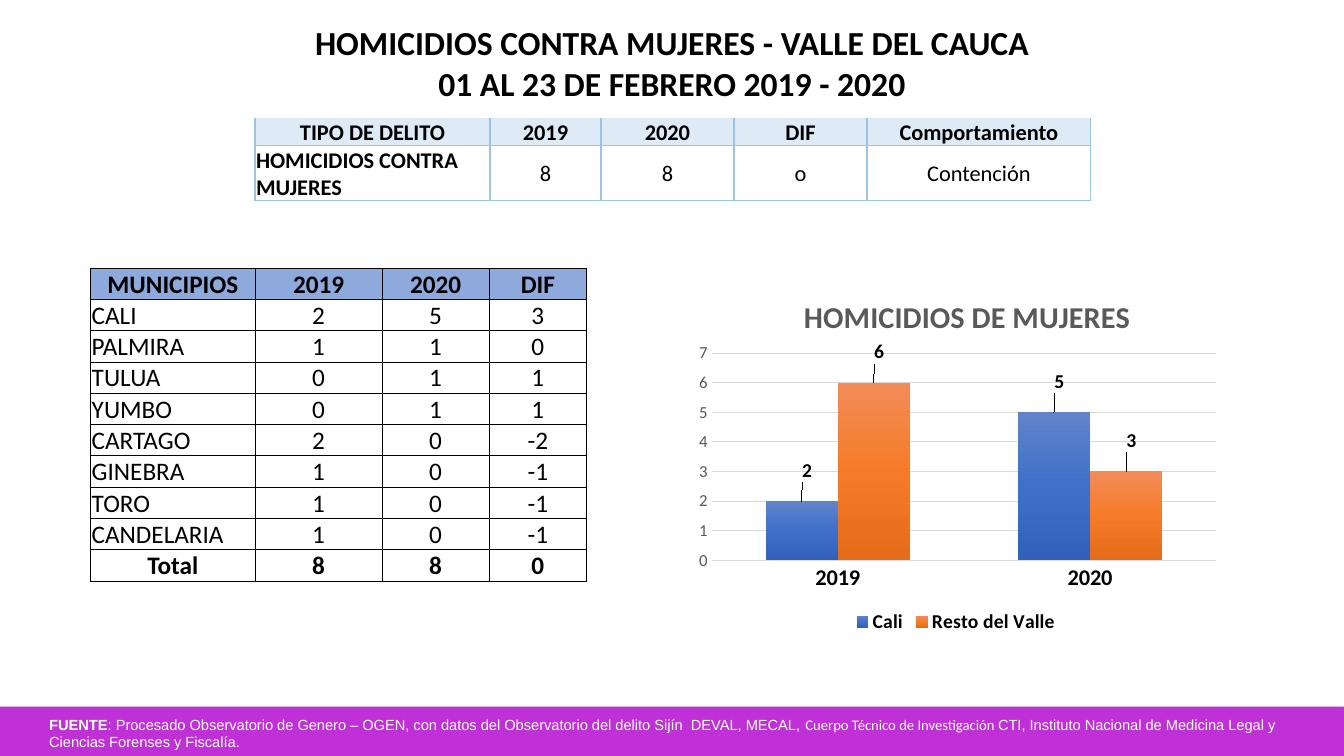
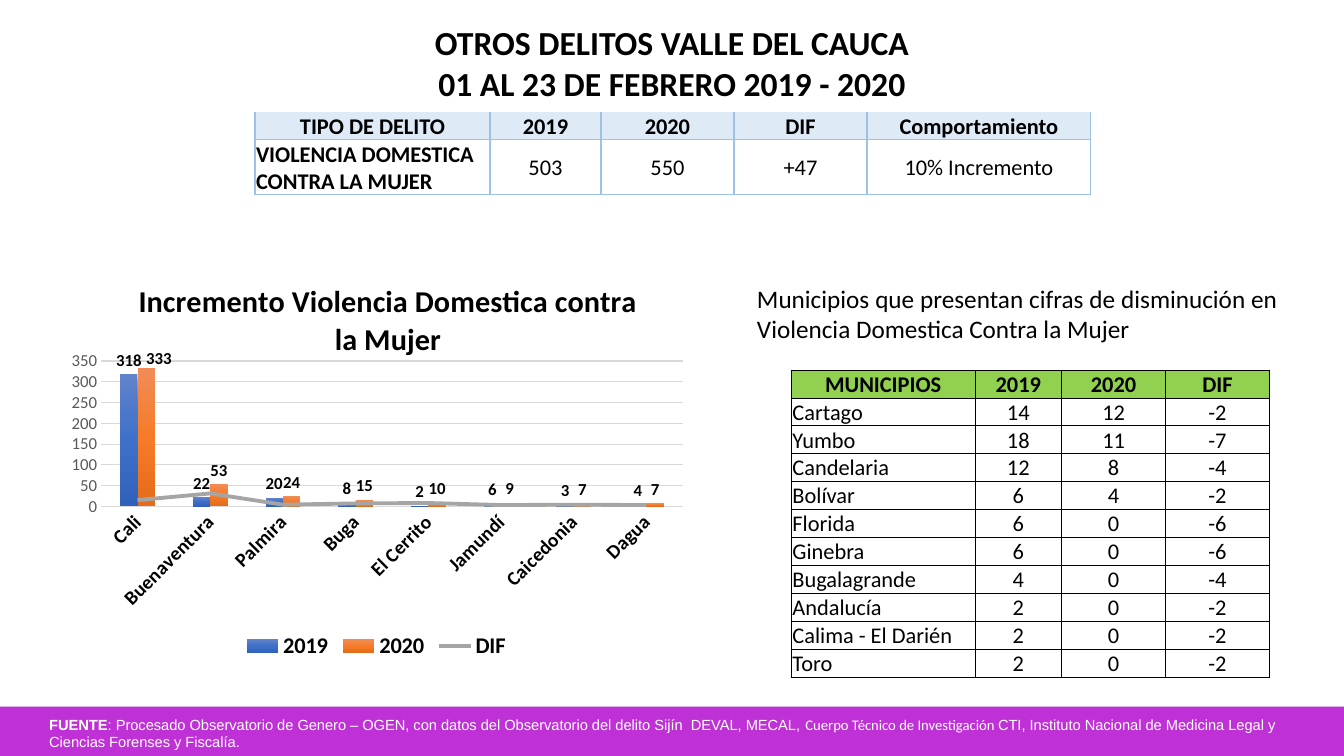
from lxml import etree
from pptx import Presentation
from pptx.chart.data import CategoryChartData
from pptx.dml.color import RGBColor
from pptx.enum.chart import XL_CHART_TYPE as ChartType, XL_LABEL_POSITION as LabelPosition
from pptx.enum.chart import XL_LEGEND_POSITION as LegendPosition, XL_MARKER_STYLE as Marker
from pptx.enum.chart import XL_TICK_MARK as Tick
from pptx.enum.shapes import MSO_SHAPE as Shape
from pptx.enum.text import MSO_ANCHOR as Anchor, PP_ALIGN as Align
from pptx.oxml import parse_xml
from pptx.oxml.ns import nsdecls, qn
from pptx.util import Inches, Pt

BLACK = RGBColor(0x00, 0x00, 0x00)
WHITE = RGBColor(0xFF, 0xFF, 0xFF)
PURPLE = RGBColor(0xBF, 0x31, 0xD7)
PALE_BLUE = RGBColor(0xDE, 0xEA, 0xF6)
SKY = RGBColor(0x9C, 0xC2, 0xE5)
PERIWINKLE = RGBColor(0x8E, 0xA9, 0xDB)
GREEN = RGBColor(0x92, 0xD0, 0x50)
DARK_GREY = RGBColor(0x59, 0x59, 0x59)
MID_GREY = RGBColor(0xA5, 0xA5, 0xA5)
LIGHT_GREY = RGBColor(0xD9, 0xD9, 0xD9)
BLUES = [RGBColor(0x61, 0x83, 0xCB), RGBColor(0x3E, 0x70, 0xCA), RGBColor(0x30, 0x62, 0xBB)]
ORANGES = [RGBColor(0xF1, 0x8C, 0x57), RGBColor(0xF6, 0x7B, 0x28), RGBColor(0xE5, 0x6C, 0x19)]

PERIOD = "01 AL 23 DE FEBRERO 2019 - 2020"
SOURCE = [
    ("FUENTE", {"bold": True}),
    (": Procesado Observatorio de Genero – OGEN, con datos del Observatorio del delito Sijín  "
     "DEVAL, MECAL, ", {}),
    ("Cuerpo Técnico de Investigación ", {"font": "Calibri"}),
    ("CTI, Instituto Nacional de Medicina Legal y Ciencias Forenses y Fiscalía.", {}),
]
SUMMARY_HEADER = ["TIPO DE DELITO", "2019", "2020", "DIF", "Comportamiento"]
SUMMARY_WIDTHS = [2.33, 1.1, 1.32, 1.32, 2.22]
TOWN_HEADER = ["MUNICIPIOS", "2019", "2020", "DIF"]

HOMICIDE_TOWNS = [
    ("CALI", 2, 5), ("PALMIRA", 1, 1), ("TULUA", 0, 1), ("YUMBO", 0, 1), ("CARTAGO", 2, 0),
    ("GINEBRA", 1, 0), ("TORO", 1, 0), ("CANDELARIA", 1, 0), ("Total", 8, 8),
]
DECREASE_TOWNS = [
    ("Cartago", 14, 12), ("Yumbo", 18, 11), ("Candelaria", 12, 8), ("Bolívar", 6, 4),
    ("Florida", 6, 0), ("Ginebra", 6, 0), ("Bugalagrande", 4, 0), ("Andalucía", 2, 0),
    ("Calima - El Darién", 2, 0), ("Toro", 2, 0),
]
INCREASE_TOWNS = [
    ("Cali", 318, 333), ("Buenaventura", 22, 53), ("Palmira", 20, 24), ("Buga", 8, 15),
    ("El Cerrito", 2, 10), ("Jamundí", 6, 9), ("Caicedonia", 3, 7), ("Dagua", 4, 7),
]
DECREASE_NOTE = ("Municipios que presentan cifras de disminución en "
                 "Violencia Domestica Contra la Mujer")

HOMICIDE_CHART = {
    "title": "HOMICIDIOS DE MUJERES", "title_color": DARK_GREY, "title_at": (0.21, 0.06),
    "box": (6.79, 2.66, 5.38, 3.67), "plot": (0.05, 0.23, 0.93, 0.56),
    "categories": ["2019", "2020"],
    "bars": [("Cali", [2, 5], BLUES), ("Resto del Valle", [6, 3], ORANGES)],
    "gap": 150, "top": 7, "step": 1, "category_size": 16, "label_size": 14, "legend_size": 14,
    "moved_labels": [(series, point, 0.01, -0.04) for series in (0, 1) for point in (0, 1)],
}
VIOLENCE_CHART = {
    "title": "Incremento Violencia Domestica contra la Mujer", "title_color": BLACK,
    "title_at": (0.12, 0.06),
    "box": (0.56, 2.47, 6.34, 4.12), "plot": (0.07, 0.27, 0.91, 0.35),
    "categories": [town for town, _, _ in INCREASE_TOWNS],
    "bars": [("2019", [before for _, before, _ in INCREASE_TOWNS], BLUES),
             ("2020", [after for _, _, after in INCREASE_TOWNS], ORANGES)],
    "line": ("DIF", [after - before for _, before, after in INCREASE_TOWNS], MID_GREY),
    "gap": 219, "top": 350, "step": 50, "category_size": 14, "label_size": 12, "legend_size": 16,
    "rotation": -45, "moved_labels": [(1, 0, 0.02, 0.01)],
}


def style_font(font, size, color=BLACK, bold=False, name="Calibri"):
    font.size, font.bold, font.name = Pt(size), bold, name
    font.color.rgb = color


def write(frame, *paragraphs, size, font="Calibri", color=BLACK, bold=False,
          align=Align.LEFT, anchor=Anchor.TOP):
    frame.word_wrap = True
    frame.vertical_anchor = anchor
    for index, content in enumerate(paragraphs):
        para = frame.add_paragraph() if index else frame.paragraphs[0]
        para.alignment = align
        for text, changes in [(content, {})] if isinstance(content, str) else content:
            span = para.add_run()
            span.text = text
            style_font(span.font, size, color, changes.get("bold", bold),
                       changes.get("font", font))


def add_text(slide, box, *paragraphs, **style):
    write(slide.shapes.add_textbox(*map(Inches, box)).text_frame, *paragraphs, **style)


def add_base(deck, heading):
    slide = deck.slides.add_slide(deck.slide_layouts[5])
    title = slide.shapes.title
    title.left, title.top, title.width, title.height = map(Inches, (1.65, 0.17, 10.03, 0.91))
    write(title.text_frame, heading, PERIOD, size=24, bold=True, align=Align.CENTER)
    band = slide.shapes.add_shape(Shape.RECTANGLE, *map(Inches, (0, 7.01, 13.33, 0.49)))
    band.fill.solid()
    band.fill.fore_color.rgb = PURPLE
    band.line.fill.background()
    band.shadow.inherit = False
    band._element.spPr.find(qn("a:effectLst")).append(parse_xml(
        f'<a:outerShdw {nsdecls("a")} blurRad="{Pt(3.5)}" dist="{Pt(2.2)}" dir="5400000" '
        'rotWithShape="0"><a:srgbClr val="000000"><a:alpha val="32000"/></a:srgbClr>'
        '</a:outerShdw>'))
    add_text(slide, (0.39, 7.05, 12.56, 0.45), SOURCE, size=10.5, font="Arial", color=WHITE)
    return slide


def set_borders(cell, color, width, open_top):
    properties = cell._tc.get_or_add_tcPr()
    for index, side in enumerate(("lnL", "lnR", "lnT", "lnB")):
        line = etree.Element(qn(f"a:{side}"), w=str(Pt(width)))
        if side == "lnT" and open_top:
            etree.SubElement(line, qn("a:noFill"))
        else:
            fill = etree.SubElement(line, qn("a:solidFill"))
            etree.SubElement(fill, qn("a:srgbClr"), val=str(color))
        properties.insert(index, line)


def add_grid(slide, left, top, widths, heights, rows, *, size, header_fill, border,
             bold_names=False, open_top=False, anchor=Anchor.MIDDLE):
    table = slide.shapes.add_table(
        len(rows), len(widths), Inches(left), Inches(top),
        Inches(sum(widths)), Inches(sum(heights))).table
    table.first_row = table.horz_banding = False
    for column, width in zip(table.columns, widths):
        column.width = Inches(width)
    for y, (row, height) in enumerate(zip(rows, heights)):
        table.rows[y].height = Inches(height)
        is_total = row[0] == "Total"
        for x, value in enumerate(row):
            cell = table.cell(y, x)
            cell.margin_left = cell.margin_right = cell.margin_top = Inches(0.01)
            cell.margin_bottom = 0
            if y == 0:
                cell.fill.solid()
                cell.fill.fore_color.rgb = header_fill
            else:
                cell.fill.background()
            is_name = x == 0 and y > 0 and not is_total
            write(cell.text_frame, str(value), size=size,
                  bold=y == 0 or is_total or (is_name and bold_names),
                  align=Align.LEFT if is_name else Align.CENTER)
            cell.vertical_anchor = anchor
            set_borders(cell, *border, open_top and y == 0)


def add_summary(slide, top, values):
    add_grid(slide, 2.53, top, SUMMARY_WIDTHS, [0.27, 0.54], [SUMMARY_HEADER, values], size=16,
             header_fill=PALE_BLUE, border=(SKY, 1), bold_names=True, open_top=True)


def add_towns(slide, left, top, widths, height, towns, **style):
    rows = [TOWN_HEADER] + [(town, before, after, after - before)
                            for town, before, after in towns]
    add_grid(slide, left, top, widths, [height / len(rows)] * len(rows), rows,
             border=(BLACK, 0.5), **style)


def set_layout(parent, index, x, y, w=None, h=None):
    for old in parent.findall(qn("c:layout")):
        parent.remove(old)
    layout = etree.Element(qn("c:layout"))
    manual = etree.SubElement(layout, qn("c:manualLayout"))
    entries = [("x", x), ("y", y)]
    if w is not None:
        entries = [("layoutTarget", "inner"), ("xMode", "edge"), ("yMode", "edge"),
                   *entries, ("w", w), ("h", h)]
    elif parent.tag == qn("c:title"):
        entries = [("xMode", "edge"), ("yMode", "edge"), *entries]
    for name, value in entries:
        etree.SubElement(manual, qn(f"c:{name}"), val=str(value))
    parent.insert(index, layout)


def fill_gradient(series, colors):
    stops = "".join(f'<a:gs pos="{index * 50000}"><a:srgbClr val="{color}"/></a:gs>'
                    for index, color in enumerate(colors))
    series._element.get_or_add_spPr().append(parse_xml(
        f'<a:gradFill {nsdecls("a")} rotWithShape="1"><a:gsLst>{stops}</a:gsLst>'
        '<a:lin ang="5400000" scaled="0"/></a:gradFill>'))


def turn_last_bar_into_line(chart, color):
    bar_chart = chart.plots[0]._element
    series = bar_chart.findall(qn("c:ser"))[-1]
    for flag in series.findall(qn("c:invertIfNegative")):
        series.remove(flag)
    line_chart = parse_xml(
        f'<c:lineChart {nsdecls("c")}><c:grouping val="standard"/><c:varyColors val="0"/>'
        '<c:marker val="1"/></c:lineChart>')
    line_chart.insert(2, series)
    for axis in bar_chart.findall(qn("c:axId")):
        etree.SubElement(line_chart, qn("c:axId"), val=axis.get("val"))
    bar_chart.addnext(line_chart)
    line = chart.plots[1].series[0]
    line.smooth = False
    line.marker.style = Marker.NONE
    line.format.line.color.rgb = color
    line.format.line.width = Pt(2.75)


def add_column_chart(slide, content):
    data = CategoryChartData()
    data.categories = content["categories"]
    line = content.get("line")
    for name, values, _ in content["bars"] + ([line] if line else []):
        data.add_series(name, values)
    chart = slide.shapes.add_chart(
        ChartType.COLUMN_CLUSTERED, *map(Inches, content["box"]), data).chart
    style_font(chart.font, 10)
    if line:
        turn_last_bar_into_line(chart, line[2])

    chart.has_title = True
    write(chart.chart_title.text_frame, content["title"], size=21.6, bold=True,
          color=content["title_color"], align=Align.CENTER)
    chart.chart_title.include_in_layout = False
    area = chart._chartSpace.chart
    set_layout(area.find(qn("c:title")), 1, *content["title_at"])
    set_layout(area.find(qn("c:plotArea")), 0, *content["plot"])
    chart.has_legend = True
    chart.legend.position = LegendPosition.BOTTOM
    chart.legend.include_in_layout = False
    style_font(chart.legend.font, content["legend_size"], bold=True)

    categories, values = chart.category_axis, chart.value_axis
    style_font(categories.tick_labels.font, content["category_size"], bold=True)
    style_font(values.tick_labels.font, 12, DARK_GREY)
    for axis in (categories, values):
        axis.major_tick_mark = axis.minor_tick_mark = Tick.NONE
    categories.format.line.color.rgb = LIGHT_GREY
    categories.format.line.width = Pt(1)
    if "rotation" in content:
        body = categories._element.find(qn("c:txPr")).find(qn("a:bodyPr"))
        body.set("rot", str(content["rotation"] * 60000))
        body.set("vert", "horz")
    values.format.line.fill.background()
    values.major_gridlines.format.line.color.rgb = LIGHT_GREY
    values.major_gridlines.format.line.width = Pt(0.75)
    values.minimum_scale, values.maximum_scale = 0, content["top"]
    values.major_unit = content["step"]

    plot = chart.plots[0]
    plot.vary_by_categories = False
    plot.gap_width, plot.overlap = content["gap"], 0
    for series, (_, _, colors) in zip(plot.series, content["bars"]):
        fill_gradient(series, colors)
        labels = series.data_labels
        labels.show_value = True
        labels.position = LabelPosition.OUTSIDE_END
        style_font(labels.font, content["label_size"], bold=True)
    for series_index, point, x, y in content["moved_labels"]:
        series = plot.series[series_index]
        label = series.points[point].data_label
        label.position = LabelPosition.OUTSIDE_END
        style_font(label.font, content["label_size"], bold=True)
        set_layout(series._element.xpath(f'c:dLbls/c:dLbl[c:idx/@val="{point}"]')[0], 1, x, y)


def main():
    deck = Presentation()
    deck.slide_width, deck.slide_height = Inches(13.33), Inches(7.5)

    homicides = add_base(deck, "HOMICIDIOS CONTRA MUJERES - VALLE DEL CAUCA")
    add_summary(homicides, 1.17, ["HOMICIDIOS CONTRA MUJERES", "8", "8", "o", "Contención"])
    add_towns(homicides, 0.9, 2.66, [1.63, 1.26, 1.06, 0.97], 3.07, HOMICIDE_TOWNS,
              size=18, header_fill=PERIWINKLE)
    add_column_chart(homicides, HOMICIDE_CHART)

    violence = add_base(deck, "OTROS DELITOS VALLE DEL CAUCA")
    add_summary(violence, 1.11, ["VIOLENCIA DOMESTICA CONTRA LA MUJER", "503", "550", "+47",
                                 "10% Incremento"])
    add_text(violence, (7.41, 2.76, 5.36, 0.71), DECREASE_NOTE, size=18, align=Align.JUSTIFY)
    add_towns(violence, 7.85, 3.67, [1.82, 0.86, 1.03, 1.03], 3.01, DECREASE_TOWNS,
              size=16, header_fill=GREEN, anchor=Anchor.BOTTOM)
    add_column_chart(violence, VIOLENCE_CHART)

    deck.save("out.pptx")


if __name__ == "__main__":
    main()
